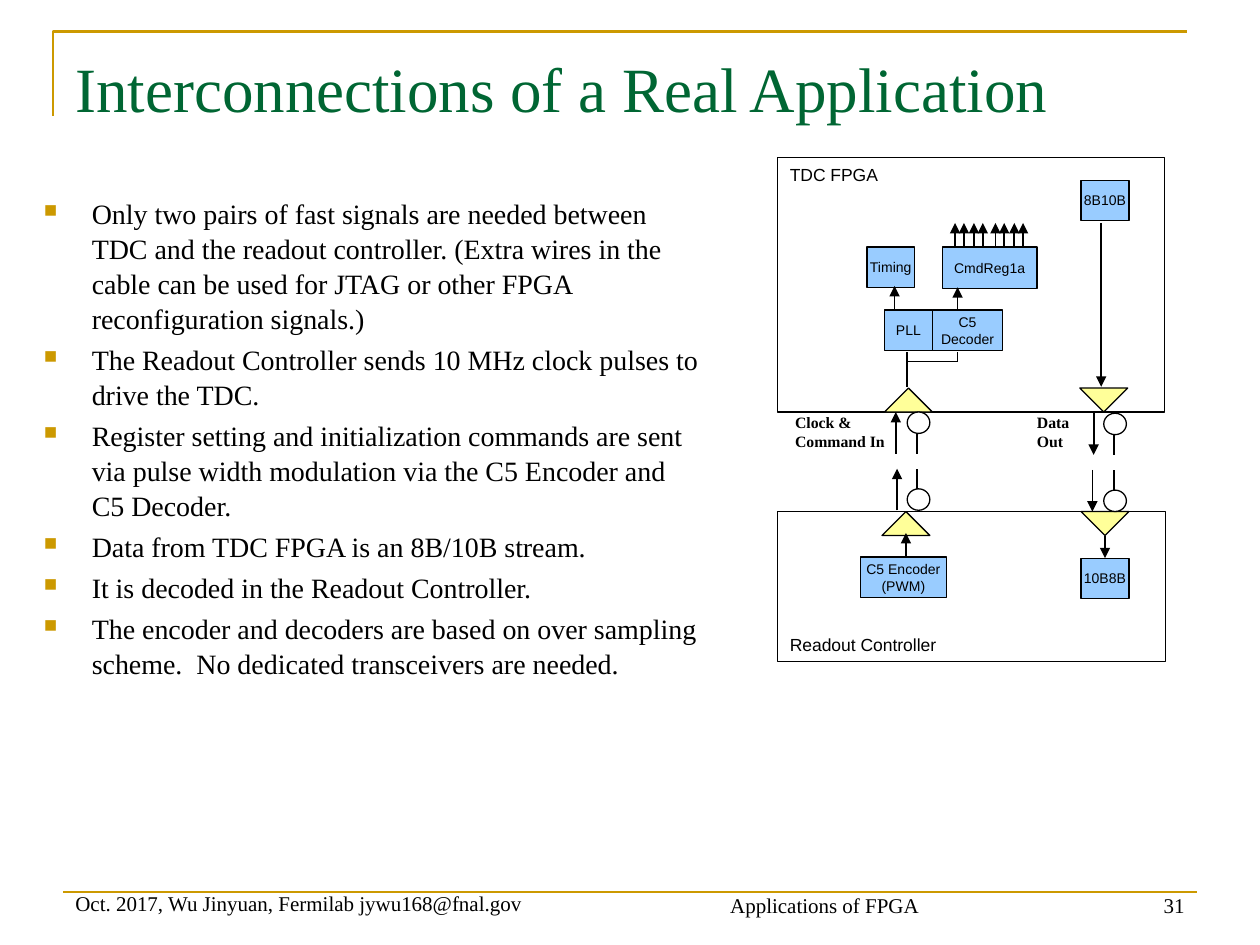
from lxml import etree
from pptx import Presentation
from pptx.dml.color import RGBColor
from pptx.enum.shapes import MSO_CONNECTOR, MSO_SHAPE
from pptx.enum.text import MSO_ANCHOR, PP_ALIGN
from pptx.oxml.ns import qn
from pptx.util import Inches, Pt

GOLD = RGBColor(0xCC, 0x99, 0x00)
GREEN = RGBColor(0x00, 0x66, 0x33)
BLACK = RGBColor(0x00, 0x00, 0x00)
WHITE = RGBColor(0xFF, 0xFF, 0xFF)
BLUE = RGBColor(0x99, 0xCC, 0xFF)
YELLOW = RGBColor(0xFF, 0xFF, 0x99)
SERIF, SANS = "Times New Roman", "Arial"
LEFT, MID, RIGHT = PP_ALIGN.LEFT, PP_ALIGN.CENTER, PP_ALIGN.RIGHT
TOP, CENTER, BOTTOM = MSO_ANCHOR.TOP, MSO_ANCHOR.MIDDLE, MSO_ANCHOR.BOTTOM

prs = Presentation()
prs.slide_width, prs.slide_height = Inches(10), Inches(7.5)
slide = prs.slides.add_slide(prs.slide_layouts[6])
shapes = slide.shapes


def write(text, box, shape=None, size=12, font=SERIF, color=BLACK, bold=False,
          align=LEFT, anchor=TOP, inset=True, bullet=False, fill=WHITE):
    """Put text, one paragraph a line, in a text box or a filled shape."""
    at = [Inches(v) for v in box]
    if shape is None:
        item = shapes.add_textbox(*at)
    else:
        item = shapes.add_shape(shape, *at)
        item.shadow.inherit = False
        item.fill.solid()
        item.fill.fore_color.rgb = fill
        item.line.color.rgb = BLACK
        item.line.width = Pt(0.75)
    frame = item.text_frame
    frame.word_wrap = True
    frame.vertical_anchor = anchor
    if not inset:
        frame.margin_left = frame.margin_right = 0
        frame.margin_top = frame.margin_bottom = 0
    for i, line in enumerate(text.split("\n") if text else []):
        para = frame.add_paragraph() if i else frame.paragraphs[0]
        para.alignment = align
        if bullet:
            para.line_spacing = 1.04
            if i:
                para.space_before = Pt(3.5)
            props = para._p.get_or_add_pPr()
            props.set("marL", str(Inches(0.38)))
            props.set("indent", str(-Inches(0.38)))
            tint = etree.SubElement(props, qn("a:buClr"))
            etree.SubElement(tint, qn("a:srgbClr")).set("val", str(GOLD))
            etree.SubElement(props, qn("a:buSzPct")).set("val", "65000")
            etree.SubElement(props, qn("a:buChar")).set("char", "■")
        run = para.add_run()
        run.text = line
        run.font.size, run.font.name = Pt(size), font
        run.font.bold, run.font.color.rgb = bold, color
    return item


def wire(x1, y1, x2, y2, arrow=False, color=BLACK, width=1):
    """Draw a straight line, with an arrowhead at its end if asked."""
    line = shapes.add_connector(MSO_CONNECTOR.STRAIGHT, *map(Inches, (x1, y1, x2, y2)))
    line.line.color.rgb = color
    line.line.width = Pt(width)
    if arrow:
        end = etree.SubElement(line.line._get_or_add_ln(), qn("a:tailEnd"))
        end.set("type", "triangle")
    etree.SubElement(line._element.spPr, qn("a:effectLst"))


# Frame rules
path = shapes.build_freeform(Inches(0.42), Inches(0.92))
path.add_line_segments([(Inches(0.42), Inches(0.25)), (Inches(9.42), Inches(0.25))], close=False)
rule = path.convert_to_shape()
rule.shadow.inherit = False
rule.fill.background()
rule.line.color.rgb = GOLD
rule.line.width = Pt(1.5)
wire(0.5, 7.08, 9.5, 7.08, color=GOLD, width=1.5)

# Title and footer
write("Interconnections of a Real Application", (0.5, 0.3, 9, 0.78),
      size=36, color=GREEN, anchor=CENTER)
write("Oct. 2017, Wu Jinyuan, Fermilab jywu168@fnal.gov", (0.5, 7.08, 3.83, 0.24), anchor=BOTTOM)
write("Applications of FPGA", (4.42, 7, 4.25, 0.33), align=MID, anchor=BOTTOM)
write("31", (8.75, 7.08, 0.75, 0.25), align=RIGHT, anchor=BOTTOM)

# Bullets
points = [
    "Only two pairs of fast signals are needed between TDC and the readout controller. "
    "(Extra wires in the cable can be used for JTAG or other FPGA reconfiguration signals.)",
    "The Readout Controller sends 10 MHz clock pulses to drive the TDC.",
    "Register setting and initialization commands are sent via pulse width modulation "
    "via the C5 Encoder and C5 Decoder.",
    "Data from TDC FPGA is an 8B/10B stream.",
    "It is decoded in the Readout Controller.",
    "The encoder and decoders are based on over sampling scheme.  "
    "No dedicated transceivers are needed.",
]
write("\n".join(points), (0.25, 1.5, 5.42, 5.53), size=16, bullet=True)

# Two boards
write("TDC FPGA", (6.17, 1.25, 3.07, 2.02), MSO_SHAPE.RECTANGLE, size=10, font=SANS)
write("Readout Controller", (6.17, 4.06, 3.08, 1.19), MSO_SHAPE.RECTANGLE,
      size=10, font=SANS, anchor=BOTTOM)

# Logic blocks
blocks = [
    ("PLL", 7.02, 2.46, 0.38, 0.32),
    ("C5\nDecoder", 7.4, 2.46, 0.56, 0.32),
    ("Timing", 6.88, 1.96, 0.38, 0.32),
    ("CmdReg1a", 7.48, 1.96, 0.75, 0.33),
    ("8B10B", 8.58, 1.43, 0.38, 0.32),
    ("C5 Encoder\n(PWM)", 6.83, 4.42, 0.68, 0.32),
    ("10B8B", 8.58, 4.43, 0.38, 0.32),
]
for name, *box in blocks:
    write(name, box, MSO_SHAPE.RECTANGLE, size=8, font=SANS, align=MID,
          anchor=CENTER, inset=False, fill=BLUE)

# Buffers: up for the clock, down for the data
for x, y, turn in [(7.02, 3.08, 0), (8.57, 3.08, 180), (7, 4.06, 0), (8.58, 4.06, 180)]:
    buffer = write("", (x, y, 0.38, 0.19), MSO_SHAPE.ISOSCELES_TRIANGLE, fill=YELLOW)
    buffer.rotation = turn

# Inverting pins and their stubs
for x, y, stub, end in [(7.2, 3.27, 3.44, 3.6), (8.76, 3.28, 3.45, 3.61),
                        (7.2, 3.88, 3.88, 3.72), (8.76, 3.89, 3.89, 3.73)]:
    write("", (x, y, 0.18, 0.17), MSO_SHAPE.OVAL)
    wire(x + 0.08, stub, x + 0.08, end)

# Signal arrows, upright: x, start, end
arrows = [
    (7.11, 3.6, 3.27), (8.68, 3.28, 3.61), (8.67, 3.73, 4.06), (7.12, 4.05, 3.72),
    (7.1, 2.46, 2.27), (7.6, 2.46, 2.28), (8.74, 1.77, 3.07),
    (7.19, 4.42, 4.23), (8.77, 4.25, 4.43),
]
outs = [(x, 1.96, 1.77) for x in (7.58, 7.65, 7.73, 7.8, 7.9, 7.97, 8.05, 8.12)]
for x, start, end in arrows + outs:
    wire(x, start, x, end, arrow=True)

# Clock split to PLL and decoder
wire(7.2, 3.07, 7.2, 2.79)
wire(7.21, 2.87, 7.6, 2.87)
wire(7.6, 2.87, 7.6, 2.79)

# Cable labels
write("Clock & Command In", (6.31, 3.28, 0.72, 0.3), size=9, bold=True, inset=False)
write("Data\nOut", (8.23, 3.28, 0.36, 0.3), size=9, bold=True, inset=False)

prs.save("out.pptx")
